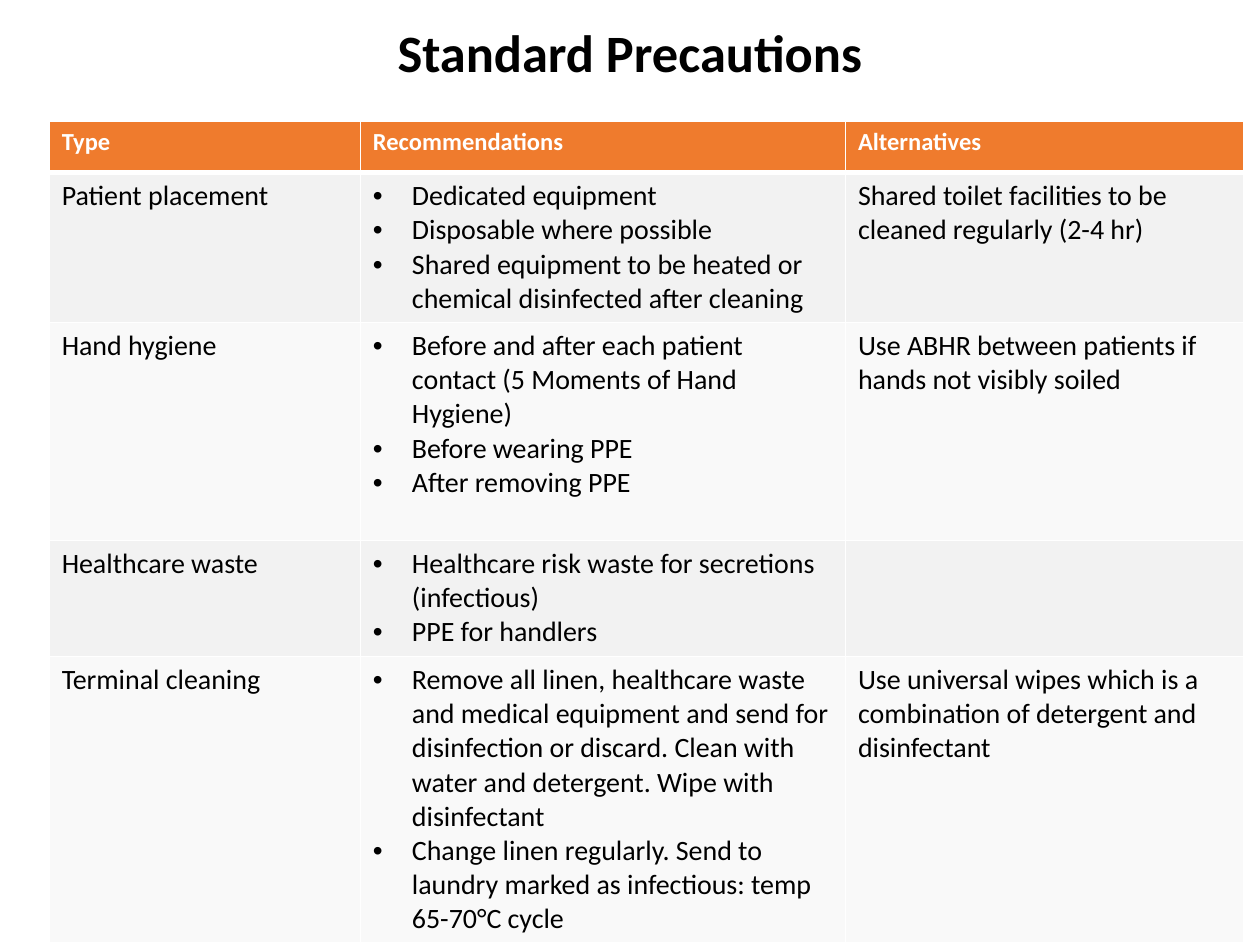
"""Build a slide with a table of standard infection-control precautions."""
from lxml.etree import SubElement
from pptx import Presentation
from pptx.dml.color import RGBColor
from pptx.enum.text import MSO_AUTO_SIZE, PP_ALIGN
from pptx.oxml.ns import qn
from pptx.util import Inches, Pt

THEME = {
    "font": "Calibri",
    "header_fill": "EF7B2D",
    "band_fills": ("F9F9F9", "F2F2F2"),
    "border": "FFFFFF",
    "title": {"size": Pt(30), "bold": True, "color": "000000"},
    "header": {"size": Pt(14), "bold": True, "color": "FFFFFF"},
    "body": {"size": Pt(16), "bold": False, "color": "000000"},
}
COLUMN_WIDTHS = (2.47, 3.85, 3.16)
ROW_HEIGHTS = (0.41, 1.19, 1.73, 0.92, 2.26)
BULLET_INDENT = Inches(0.31)
RECOMMENDATIONS_COLUMN = 1
ROWS = (
    (["Type"], ["Recommendations"], ["Alternatives"]),
    (
        ["Patient placement"],
        [
            "Dedicated equipment",
            "Disposable where possible",
            "Shared equipment to be heated or chemical disinfected after cleaning",
        ],
        ["Shared toilet facilities to be cleaned regularly (2-4 hr)"],
    ),
    (
        ["Hand hygiene"],
        [
            "Before and after each patient contact (5 Moments of Hand Hygiene)",
            "Before wearing PPE",
            "After removing PPE",
        ],
        ["Use ABHR between patients if hands not visibly soiled"],
    ),
    (
        ["Healthcare waste"],
        ["Healthcare risk waste for secretions (infectious)", "PPE for handlers"],
        [],
    ),
    (
        ["Terminal cleaning"],
        [
            "Remove all linen, healthcare waste and medical equipment and send for "
            "disinfection or discard. Clean with water and detergent. Wipe with disinfectant",
            "Change linen regularly. Send to laundry marked as infectious: temp 65-70°C cycle",
        ],
        ["Use universal wipes which is a combination of detergent and disinfectant"],
    ),
)


def write_paragraphs(frame, lines, style, bulleted=False):
    for index, line in enumerate(lines):
        para = frame.paragraphs[0] if index == 0 else frame.add_paragraph()
        if bulleted:
            properties = para._p.get_or_add_pPr()
            properties.set("marL", str(BULLET_INDENT))
            properties.set("indent", str(-BULLET_INDENT))
            SubElement(properties, qn("a:buFont"), typeface="Arial")
            SubElement(properties, qn("a:buChar"), char="•")
        span = para.add_run()
        span.text = line
        for name, value in {"name": THEME["font"], "size": style["size"], "bold": style["bold"]}.items():
            setattr(span.font, name, value)
        span.font.color.rgb = RGBColor.from_string(style["color"])


def set_borders(cell, bottom_width):
    properties = cell._tc.get_or_add_tcPr()
    widths = {"a:lnL": 1, "a:lnR": 1, "a:lnT": 1, "a:lnB": bottom_width}
    for position, (tag, width) in enumerate(widths.items()):
        line = SubElement(properties, qn(tag), w=str(Pt(width)))
        SubElement(SubElement(line, qn("a:solidFill")), qn("a:srgbClr"), val=THEME["border"])
        properties.insert(position, line)


deck = Presentation()
deck.slide_width, deck.slide_height = Inches(10), Inches(7.5)
page = deck.slides.add_slide(deck.slide_layouts[6])

table = page.shapes.add_table(
    len(ROWS), len(COLUMN_WIDTHS),
    Inches(0.39), Inches(0.96), Inches(sum(COLUMN_WIDTHS)), Inches(sum(ROW_HEIGHTS)),
).table
for column, width in zip(table.columns, COLUMN_WIDTHS):
    column.width = Inches(width)
for row, height in zip(table.rows, ROW_HEIGHTS):
    row.height = Inches(height)

for row_index, row in enumerate(ROWS):
    is_header = row_index == 0
    style = THEME["header" if is_header else "body"]
    fill = THEME["header_fill"] if is_header else THEME["band_fills"][row_index % 2]
    for column_index, lines in enumerate(row):
        cell = table.cell(row_index, column_index)
        cell.fill.solid()
        cell.fill.fore_color.rgb = RGBColor.from_string(fill)
        set_borders(cell, 3 if is_header else 1)
        bulleted = column_index == RECOMMENDATIONS_COLUMN and not is_header
        write_paragraphs(cell.text_frame, lines, style, bulleted)

title_box = page.shapes.add_textbox(Inches(2.99), Inches(0.11), Inches(4.02), Inches(0.61))
title_box.text_frame.word_wrap = False
title_box.text_frame.auto_size = MSO_AUTO_SIZE.SHAPE_TO_FIT_TEXT
write_paragraphs(title_box.text_frame, ["Standard Precautions"], THEME["title"])
title_box.text_frame.paragraphs[0].alignment = PP_ALIGN.CENTER

deck.save("out.pptx")
